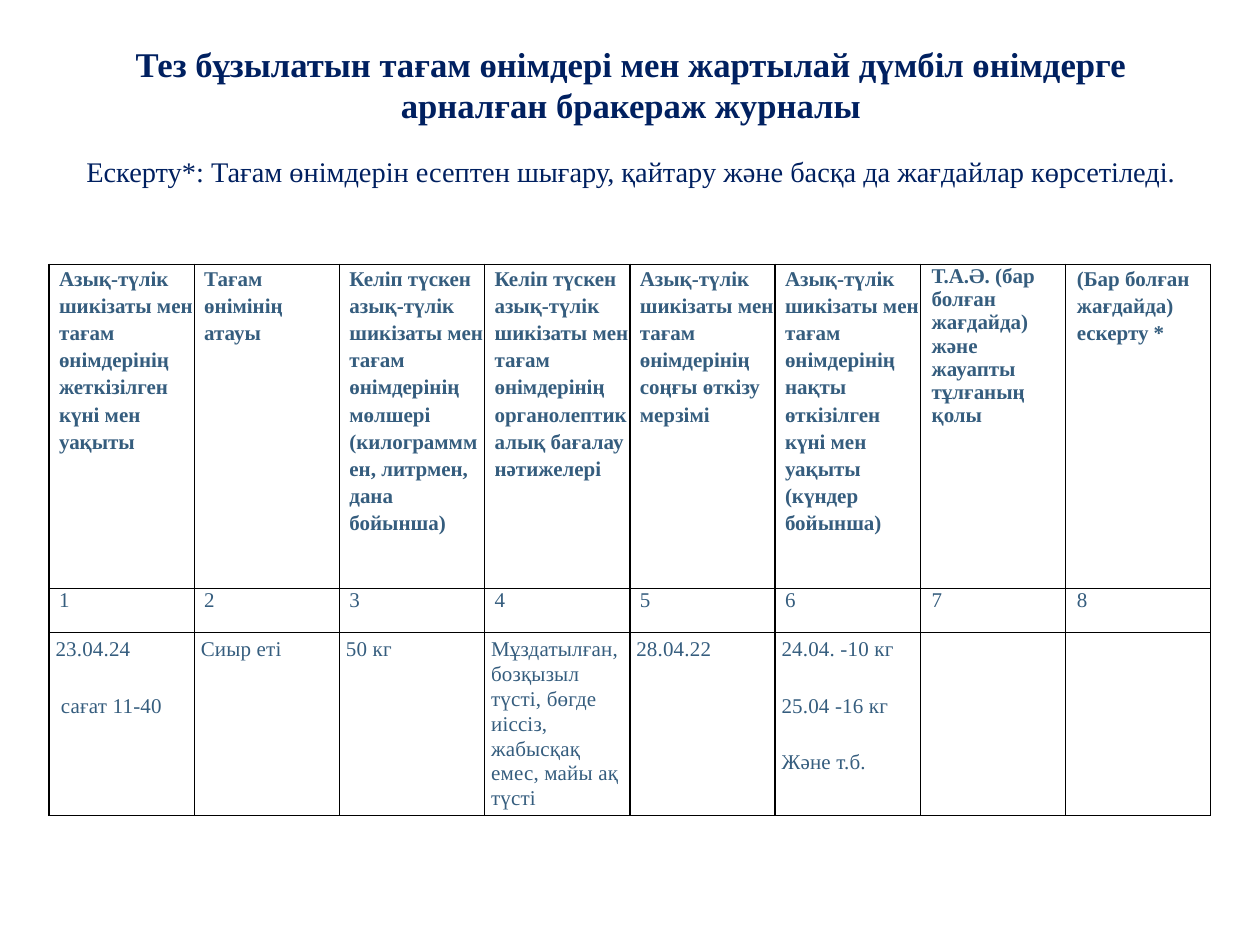
from dataclasses import dataclass

from lxml import etree
from pptx import Presentation
from pptx.dml.color import RGBColor
from pptx.enum import text
from pptx.oxml import ns
from pptx.util import Cm, Pt


@dataclass(frozen=True)
class Theme:
    """Colours, font and type sizes of the slide."""
    font: str = "Times New Roman"
    heading: RGBColor = RGBColor(0x00, 0x20, 0x60)
    body: RGBColor = RGBColor(0x35, 0x5D, 0x7E)
    border: str = "000000"
    title_size: float = 19.8
    note_size: float = 16.2
    table_size: float = 12


THEME = Theme()
TITLE = "Тез бұзылатын тағам өнімдері мен жартылай дүмбіл өнімдерге арналған бракераж журналы"
NOTE = "Ескерту*: Тағам өнімдерін есептен шығару, қайтару және басқа да жағдайлар көрсетіледі."
PRODUCTS = "шикізаты мен тағам өнімдерінің"
HEADERS = [
    f"Азық-түлік {PRODUCTS} жеткізілген күні мен уақыты",
    "Тағам өнімінің атауы",
    f"Келіп түскен азық-түлік {PRODUCTS} мөлшері (килограммен, литрмен, дана бойынша)".replace(
        "килограммен", "килограмммен"),
    f"Келіп түскен азық-түлік {PRODUCTS} органолептикалық бағалау нәтижелері",
    f"Азық-түлік {PRODUCTS} соңғы өткізу мерзімі",
    f"Азық-түлік {PRODUCTS} нақты өткізілген күні мен уақыты (күндер бойынша)",
    "Т.А.Ә. (бар болған жағдайда) және жауапты тұлғаның қолы",
    "(Бар болған жағдайда) ескерту *",
]
SIGNATURE_COLUMN = 6
ENTRY = [
    ["23.04.24", " сағат 11-40"],
    ["Сиыр еті"],
    ["50 кг"],
    ["Мұздатылған, бозқызыл түсті, бөгде иіссіз, жабысқақ емес, майы ақ түсті"],
    ["28.04.22"],
    ["24.04. -10 кг", "25.04 -16 кг", "Және т.б."],
    [],
    [],
]
ROW_HEIGHTS = [Cm(6.53), Cm(0.89), Cm(3.69)]


def add_run(paragraph, words, size, color, bold=False):
    """Add one formatted run to a paragraph and return it."""
    run = paragraph.add_run()
    run.text = words
    run.font.name = THEME.font
    run.font.size = Pt(size)
    run.font.bold = bold
    run.font.color.rgb = color
    return run


def place_title(slide, left, top, width, height):
    """Place the heading and its note in the title placeholder."""
    shape = slide.shapes.title
    shape.left, shape.top, shape.width, shape.height = left, top, width, height
    frame = shape.text_frame
    frame.word_wrap = True
    frame.auto_size = text.MSO_AUTO_SIZE.NONE
    frame.vertical_anchor = text.MSO_ANCHOR.TOP
    frame.margin_top = Cm(0.15)
    heading, note = frame.paragraphs[0], frame.add_paragraph()
    for paragraph, before in ((heading, 0), (note, 16)):
        paragraph.alignment = text.PP_ALIGN.CENTER
        paragraph.line_spacing = 1.0
        paragraph.space_before = Pt(before)
    add_run(heading, TITLE, THEME.title_size, THEME.heading, bold=True)
    add_run(note, NOTE, THEME.note_size, THEME.heading)


def format_cell(cell, horizontal, vertical):
    """Clear the fill of a cell, set its margins and draw its borders."""
    cell.margin_left = cell.margin_right = horizontal
    cell.margin_top = cell.margin_bottom = vertical
    properties = cell._tc.get_or_add_tcPr()
    for side in ("a:lnL", "a:lnR", "a:lnT", "a:lnB"):
        line = etree.SubElement(properties, ns.qn(side), w=str(Pt(1)))
        fill = etree.SubElement(line, ns.qn("a:solidFill"))
        etree.SubElement(fill, ns.qn("a:srgbClr"), val=THEME.border)
    cell.fill.background()


def fill_label(cell, words, column, bold, spacing):
    """Write an indented header or column number into a cell."""
    format_cell(cell, 0, 0)
    paragraph = cell.text_frame.paragraphs[0]
    indent = Cm(0.23 if column >= SIGNATURE_COLUMN else 0.2)
    paragraph._p.get_or_add_pPr().set("marL", str(indent))
    paragraph.space_before = Pt(2.5)
    paragraph.line_spacing = spacing
    add_run(paragraph, words, THEME.table_size, THEME.body, bold)


def fill_entry(cell, lines):
    """Write the lines of a journal entry into a cell."""
    format_cell(cell, Cm(0.13), Cm(0.08))
    frame = cell.text_frame
    for index, words in enumerate(lines):
        paragraph = frame.add_paragraph() if index else frame.paragraphs[0]
        paragraph.line_spacing = Pt(14.2)
        paragraph.space_after = Pt(18 if index < len(lines) - 1 else 0)
        run = add_run(paragraph, words, THEME.table_size, THEME.body)
        run._r.get_or_add_rPr().set("spc", "10")


def place_journal(slide, left, top, width, height):
    """Place the journal table with headers, column numbers and an entry."""
    table = slide.shapes.add_table(
        len(ROW_HEIGHTS), len(HEADERS), left, top, width, height).table
    table.first_row = table.horz_banding = False
    for row, row_height in zip(table.rows, ROW_HEIGHTS):
        row.height = row_height
    for column, (header, lines) in enumerate(zip(HEADERS, ENTRY)):
        table.columns[column].width = width // len(HEADERS)
        spacing = 1.0 if column == SIGNATURE_COLUMN else 1.16
        fill_label(table.cell(0, column), header, column, True, spacing)
        fill_label(table.cell(1, column), str(column + 1), column, False, 1.0)
        fill_entry(table.cell(2, column), lines)


def main():
    """Build the slide and save the presentation."""
    presentation = Presentation()
    presentation.slide_width, presentation.slide_height = Cm(25.4), Cm(19.05)
    slide = presentation.slides.add_slide(presentation.slide_layouts[5])
    place_title(slide, Cm(1.4), Cm(0.71), Cm(22.63), Cm(4.57))
    place_journal(slide, Cm(0.99), Cm(5.33), Cm(23.42), sum(ROW_HEIGHTS))
    presentation.save("out.pptx")


if __name__ == "__main__":
    main()
